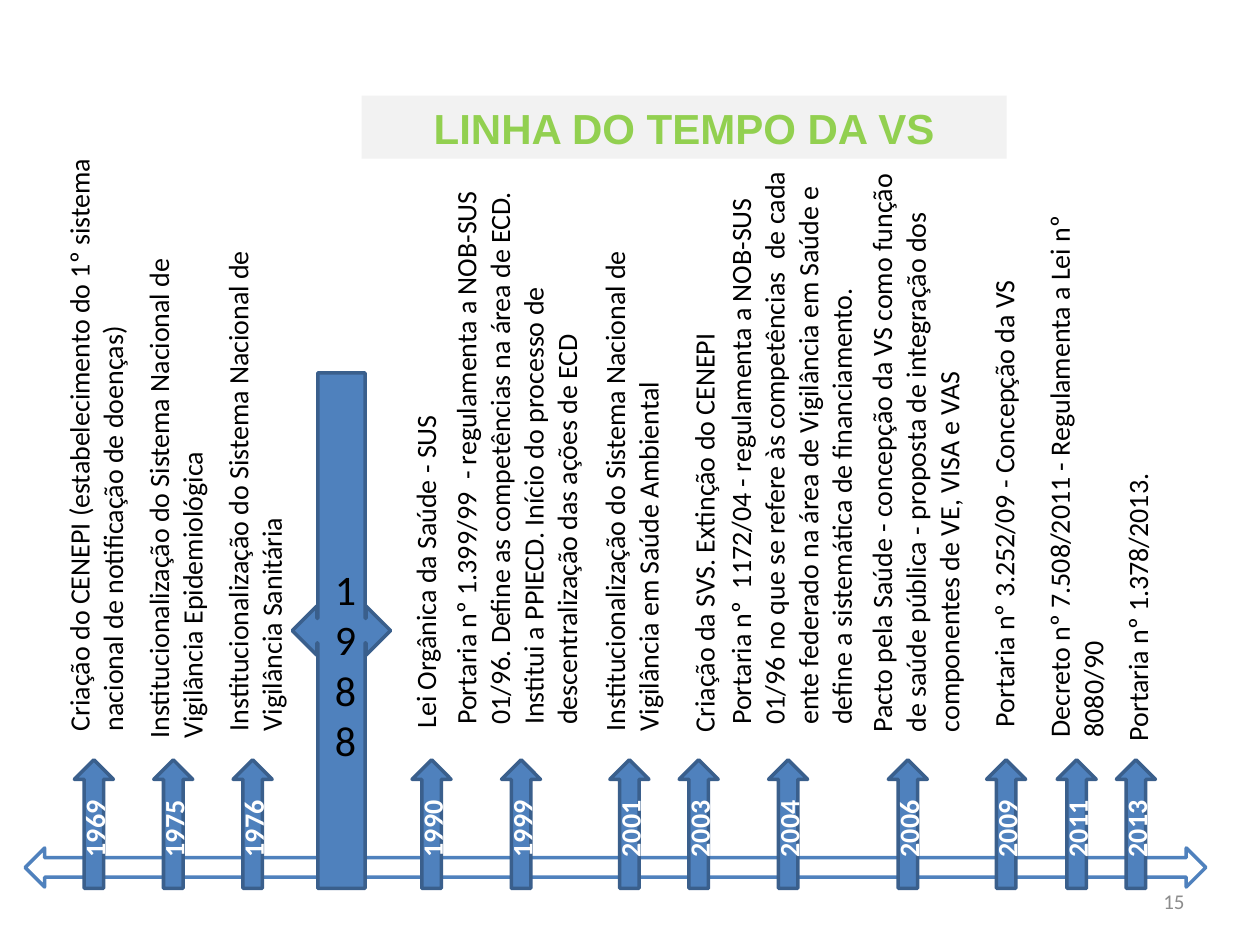
from pptx import Presentation
from pptx.dml.color import RGBColor
from pptx.enum import shapes, text
from pptx.util import Pt

PX = 9144  # EMU per px, 100 px to the inch
COLORS = {"blue": "4F81BD", "edge": "3A5F8C", "white": "FFFFFF", "black": "000000",
          "green": "92D050", "band": "F2F2F2", "gray": "8C8C8C"}
LEFT, CENTER = text.PP_ALIGN.LEFT, text.PP_ALIGN.CENTER
RIGHT, JUSTIFY = text.PP_ALIGN.RIGHT, text.PP_ALIGN.JUSTIFY
TOP, MIDDLE = text.MSO_ANCHOR.TOP, text.MSO_ANCHOR.MIDDLE

# year, arrow left, text column (left, top, width, length), text, alignment
EVENTS = [
    ("1969", 59, (44, 115, 64, 475),
     "Criação do CENEPI (estabelecimento do 1º sistema nacional de notificação de doenças)", LEFT),
    ("1975", 122, (107, 121, 64, 475),
     "Institucionalização do Sistema Nacional de Vigilância Epidemiológica", LEFT),
    ("1976", 185, (170, 115, 64, 475),
     "Institucionalização do Sistema Nacional de Vigilância Sanitária", LEFT),
    ("1990", 327, (319, 139, 37, 449), "Lei Orgânica da Saúde - SUS", LEFT),
    ("1999", 398, (351, 100, 118, 485),
     "Portaria nº 1.399/99  - regulamenta a NOB-SUS 01/96. Define as competências na área "
     "de ECD. Institui a PPIECD. Início do processo de descentralização das ações de ECD", LEFT),
    ("2001", 484, (469, 115, 64, 475),
     "Institucionalização do Sistema Nacional de Vigilância em Saúde Ambiental", LEFT),
    ("2003", 539, (540, 147, 37, 444), "Criação da SVS. Extinção do CENEPI", LEFT),
    ("2004", 610, (569, 100, 118, 485),
     "Portaria nº  1172/04 - regulamenta a NOB-SUS 01/96 no que se refere às competências  "
     "de cada ente federado na área de Vigilância em Saúde e define a sistemática de "
     "financiamento.", LEFT),
    ("2006", 705, (681, 107, 118, 484),
     "Pacto pela Saúde - concepção da VS como função de saúde pública - proposta de "
     "integração dos componentes de VE, VISA e VAS", LEFT),
    ("2009", 783, (778, 162, 37, 425), "Portaria nº 3.252/09 - Concepção da VS", JUSTIFY),
    ("2011", 839, (822, 115, 64, 480),
     "Decreto nº 7.508/2011 - Regulamenta a Lei nº 8080/90", LEFT),
    ("2013", 886, (884, 139, 37, 459), "Portaria nº 1.378/2013.", LEFT),
]


def rgb(name):
    return RGBColor.from_string(COLORS[name])


def emu(box):
    return [round(v * PX) for v in box]


def write(sp, words, size=16, color="black", bold=False, font="Calibri",
          align=LEFT, anchor=TOP):
    tf = sp.text_frame
    tf.word_wrap = True
    tf.auto_size = text.MSO_AUTO_SIZE.NONE
    tf.vertical_anchor = anchor
    p = tf.paragraphs[0]
    p.alignment = align
    r = p.add_run()
    r.text = words
    r.font.size, r.font.bold, r.font.name = Pt(size), bold, font
    r.font.color.rgb = rgb(color)


def add_text(slide, box, words, rotation=0, **style):
    sp = slide.shapes.add_textbox(*emu(box))
    sp.rotation = rotation
    write(sp, words, **style)


def add_block(slide, kind, box, fill="blue", line="edge"):
    sp = slide.shapes.add_shape(kind, *emu(box))
    sp.shadow.inherit = False
    sp.fill.solid()
    sp.fill.fore_color.rgb = rgb(fill)
    sp.line.color.rgb = rgb(line)
    sp.line.width = Pt(2)
    return sp


def title(slide, box):
    sp = slide.shapes.title
    sp.left, sp.top, sp.width, sp.height = emu(box)
    sp.fill.solid()
    sp.fill.fore_color.rgb = rgb("band")
    write(sp, "LINHA DO TEMPO DA VS", size=24, color="green", bold=True, font="Arial",
          align=CENTER)


def milestone(slide, box):
    x, y, w, h = box
    add_block(slide, shapes.MSO_SHAPE.LEFT_RIGHT_ARROW_CALLOUT, box)
    # The narrow box stacks the digits one to a line
    add_text(slide, (x + 24, y + 145, 31, 172), "1988", size=24, align=CENTER, anchor=MIDDLE)


def event(slide, arrow_box, year, column, words, align):
    # Upward arrow whose year reads from bottom to top
    sp = add_block(slide, shapes.MSO_SHAPE.DOWN_ARROW, arrow_box)
    sp.rotation = 180
    write(sp, year, color="white", bold=True, align=CENTER, anchor=MIDDLE)
    sp.text_frame._txBody.bodyPr.set("vert", "vert")
    # Description, turned about the centre of its column
    x, y, w, h = column
    shift = (h - w) / 2
    add_text(slide, (x - shift, y + shift, h, w), words, rotation=270, align=align)


def timeline(slide, box):
    x, y, w, h = box
    add_block(slide, shapes.MSO_SHAPE.LEFT_RIGHT_ARROW, box, fill="white", line="blue")
    milestone(slide, (x + 212, y - 377, 78, 409))
    for year, left, column, words, align in EVENTS:
        event(slide, (left, y - 70, 31, 102), year, column, words, align)


def main():
    prs = Presentation()
    prs.slide_width, prs.slide_height = emu((1000, 750))
    slide = prs.slides.add_slide(prs.slide_layouts[5])
    title(slide, (287, 76, 512, 50))
    timeline(slide, (20, 673, 937, 31))
    # Page number
    add_text(slide, (717, 695, 233, 40), "15", size=12, color="gray", align=RIGHT, anchor=MIDDLE)
    prs.save("out.pptx")


if __name__ == "__main__":
    main()
